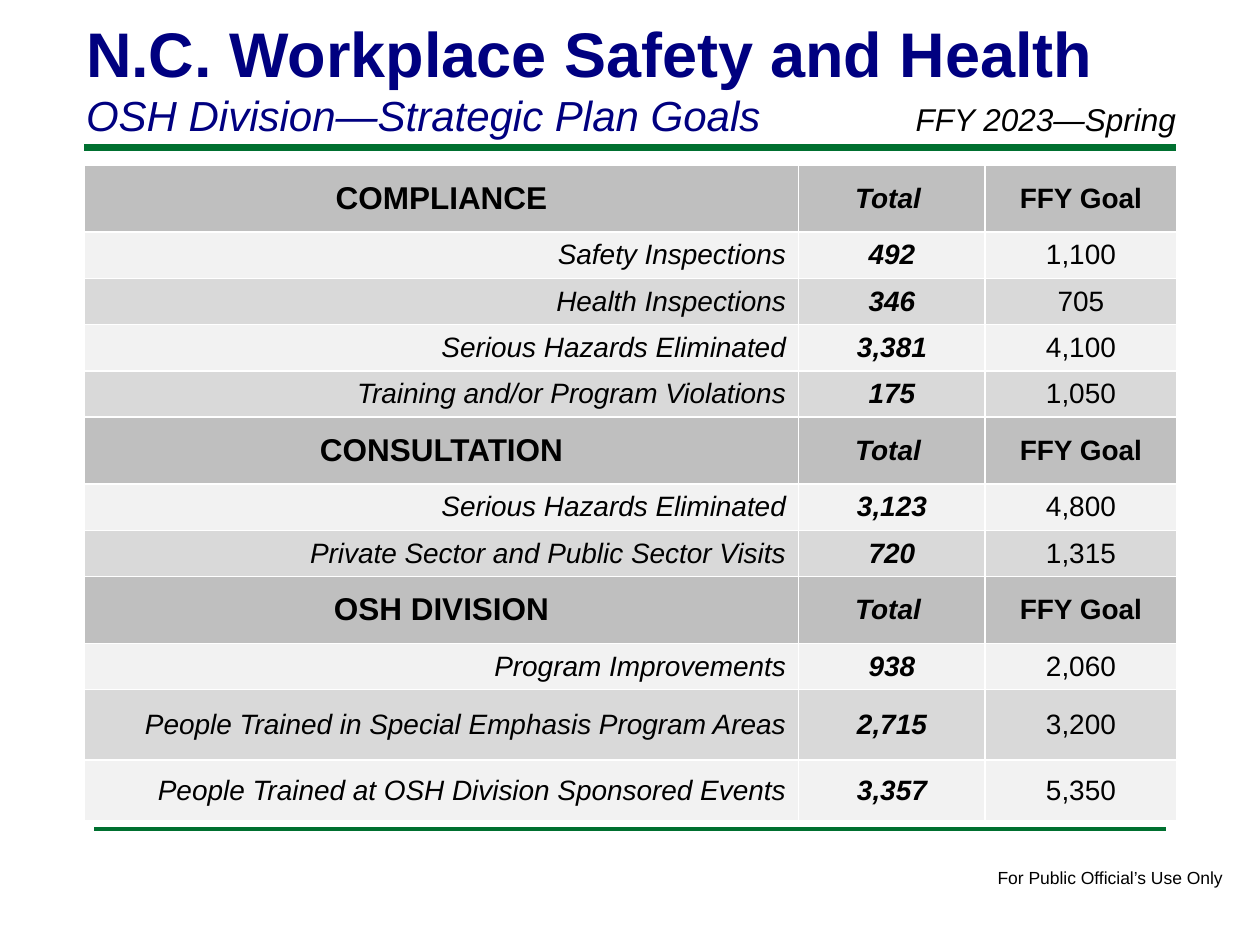
from lxml import etree
from pptx import Presentation
from pptx.dml.color import RGBColor
from pptx.enum.shapes import MSO_CONNECTOR
from pptx.enum.text import MSO_ANCHOR, MSO_AUTO_SIZE, PP_ALIGN
from pptx.oxml.ns import qn
from pptx.util import Cm, Pt

LEFT, CENTER, RIGHT = PP_ALIGN.LEFT, PP_ALIGN.CENTER, PP_ALIGN.RIGHT
TOP, MIDDLE = MSO_ANCHOR.TOP, MSO_ANCHOR.MIDDLE
NO_FIT = MSO_AUTO_SIZE.NONE
STRAIGHT = MSO_CONNECTOR.STRAIGHT

COLORS = {"navy": "000080", "green": "007030", "black": "000000", "white": "FFFFFF",
          "header": "BFBFBF", "light": "F2F2F2", "dark": "D9D9D9"}
FONT = "Arial"

TITLE = "N.C. Workplace Safety and Health"
SUBTITLE = "OSH Division—Strategic Plan Goals"
PERIOD = "FFY 2023—Spring"
FOOTER = "For Public Official’s Use Only"

HEADER_HEIGHT, ROW_HEIGHT = 1.35, 0.93
COLUMN_WIDTHS = (14.4, 3.76, 3.86)
TALL_ROWS = {"People Trained in Special Emphasis Program Areas": 1.42,
             "People Trained at OSH Division Sponsored Events": 1.22}
SECTIONS = [
    ("COMPLIANCE", [
        ("Safety Inspections", "492", "1,100"),
        ("Health Inspections", "346", "705"),
        ("Serious Hazards Eliminated", "3,381", "4,100"),
        ("Training and/or Program Violations", "175", "1,050"),
    ]),
    ("CONSULTATION", [
        ("Serious Hazards Eliminated", "3,123", "4,800"),
        ("Private Sector and Public Sector Visits", "720", "1,315"),
    ]),
    ("OSH DIVISION", [
        ("Program Improvements", "938", "2,060"),
        ("People Trained in Special Emphasis Program Areas", "2,715", "3,200"),
        ("People Trained at OSH Division Sponsored Events", "3,357", "5,350"),
    ]),
]
HEADER_STYLE = [(18, True, False, CENTER), (16, True, True, CENTER), (16, True, False, CENTER)]
ROW_STYLE = [(16, False, True, RIGHT), (16, True, True, CENTER), (16, False, False, CENTER)]
RULES = [(1.7, 23.7, 2.97, 4), (1.9, 23.5, 16.71, 2)]


def write(p, text, size, bold=False, italic=False, align=LEFT, color="black"):
    p.text = text
    p.alignment = align
    p.font.name, p.font.size = FONT, Pt(size)
    p.font.bold, p.font.italic = bold, italic
    p.font.color.rgb = RGBColor.from_string(COLORS[color])


def add_title(s):
    sp = s.shapes.title
    sp.left, sp.top, sp.width, sp.height = Cm(1.48), Cm(0.16), Cm(20.95), Cm(2.81)
    tf = sp.text_frame
    tf.auto_size, tf.vertical_anchor, tf.word_wrap = NO_FIT, TOP, True
    write(tf.paragraphs[0], TITLE, 36, bold=True, color="navy")
    write(tf.add_paragraph(), SUBTITLE, 24, italic=True, color="navy")


def add_label(s, text, box, size, italic=False, wrap=True):
    tf = s.shapes.add_textbox(*map(Cm, box)).text_frame
    tf.word_wrap = wrap
    write(tf.paragraphs[0], text, size, italic=italic)


def add_rule(s, start, end, y, width):
    line = s.shapes.add_connector(STRAIGHT, Cm(start), Cm(y), Cm(end), Cm(y))
    line.line.color.rgb = RGBColor.from_string(COLORS["green"])
    line.line.width = Pt(width)
    etree.SubElement(line._element.spPr, qn("a:effectLst"))


def format_cell(cell, text, style, fill):
    tcPr = cell._tc.get_or_add_tcPr()
    for side in ("lnL", "lnR", "lnT", "lnB"):
        ln = etree.SubElement(tcPr, qn(f"a:{side}"), w=str(Pt(1)))
        solid = etree.SubElement(ln, qn("a:solidFill"))
        etree.SubElement(solid, qn("a:srgbClr"), val=COLORS["white"])
    cell.fill.solid()
    cell.fill.fore_color.rgb = RGBColor.from_string(COLORS[fill])
    cell.vertical_anchor = MIDDLE
    size, bold, italic, align = style
    write(cell.text_frame.paragraphs[0], text, size, bold, italic, align)


def add_goals_table(s):
    rows = []
    for name, goals in SECTIONS:
        rows.append(((name, "Total ", "FFY Goal"), HEADER_STYLE, "header", HEADER_HEIGHT))
        for i, goal in enumerate(goals):
            height = TALL_ROWS.get(goal[0], ROW_HEIGHT)
            rows.append((goal, ROW_STYLE, ("light", "dark")[i % 2], height))
    total_height = sum(row[3] for row in rows)
    table = s.shapes.add_table(len(rows), len(COLUMN_WIDTHS), Cm(1.7), Cm(3.33),
                               Cm(sum(COLUMN_WIDTHS)), Cm(total_height)).table
    for column, width in zip(table.columns, COLUMN_WIDTHS):
        column.width = Cm(width)
    for row, (texts, styles, fill, height) in zip(table.rows, rows):
        row.height = Cm(height)
        for cell, text, style in zip(row.cells, texts, styles):
            format_cell(cell, text, style, fill)


def main():
    """Build the strategic plan goals slide."""
    prs = Presentation()
    prs.slide_width, prs.slide_height = Cm(25.4), Cm(19.05)
    s = prs.slides.add_slide(prs.slide_layouts[5])
    for rule in RULES:
        add_rule(s, *rule)
    add_label(s, FOOTER, (19.86, 17.35, 5.1, 0.69), 10, wrap=False)
    add_title(s)
    add_goals_table(s)
    add_label(s, PERIOD, (18.21, 1.9, 6.35, 1.02), 18, italic=True)
    prs.save("out.pptx")


if __name__ == "__main__":
    main()
